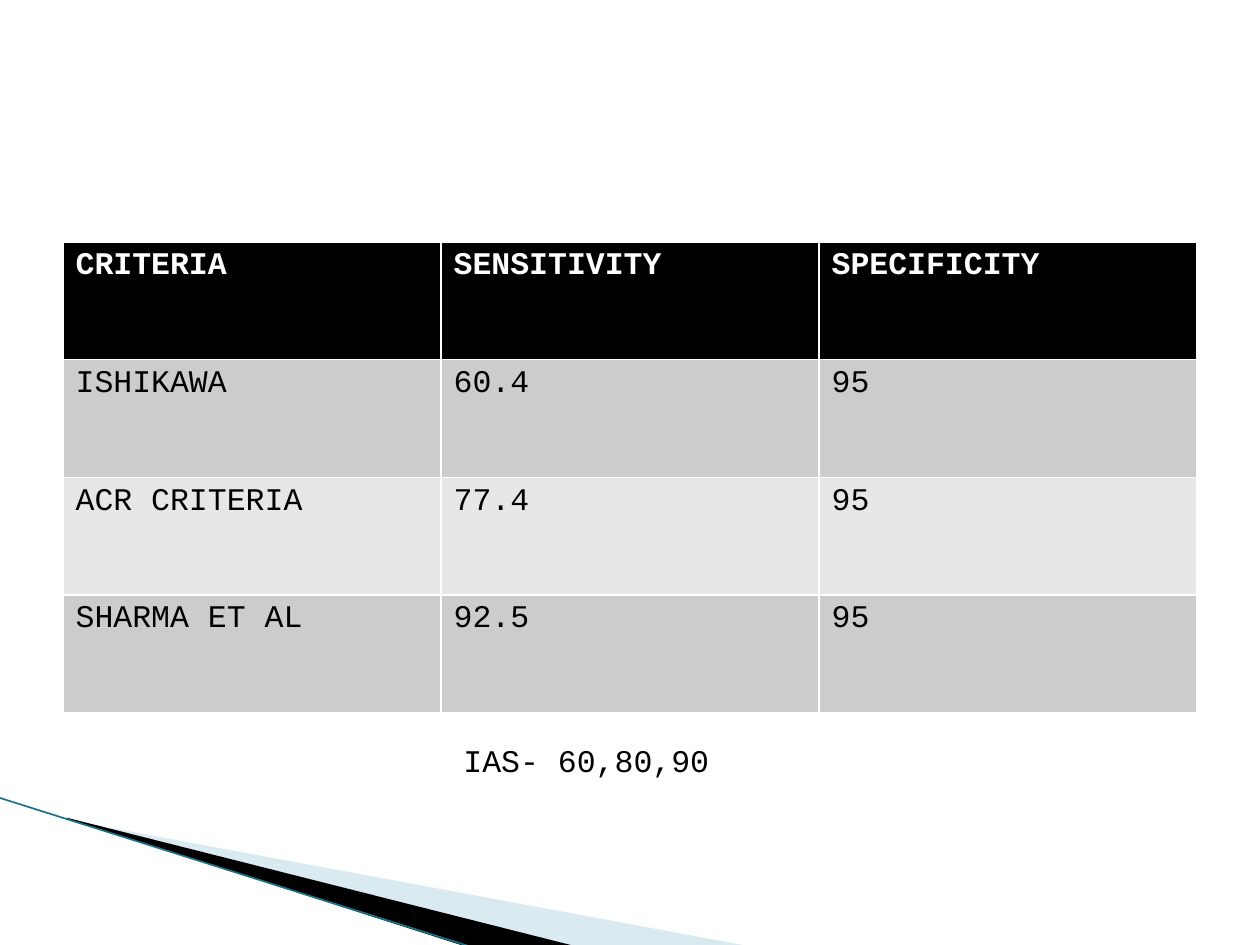
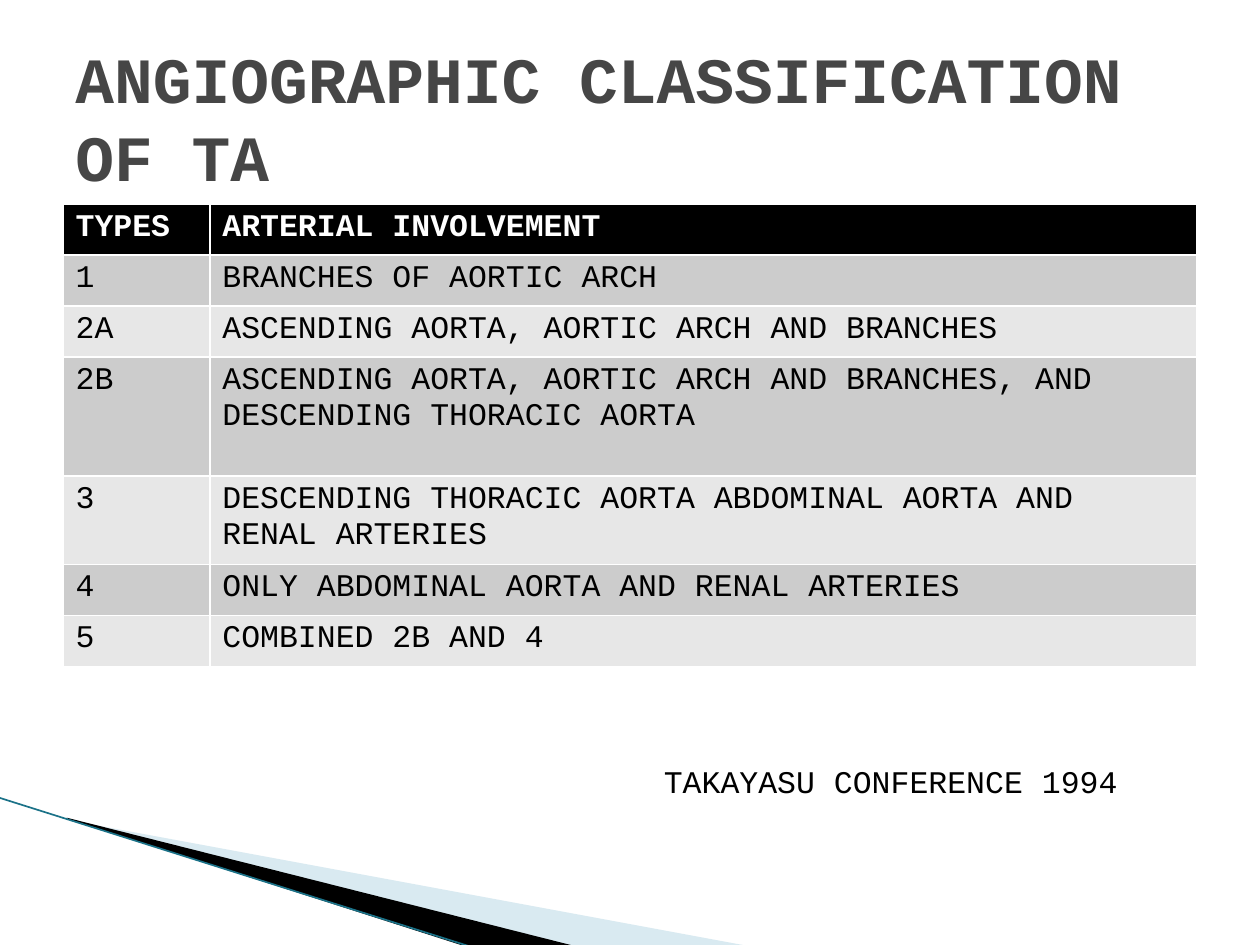
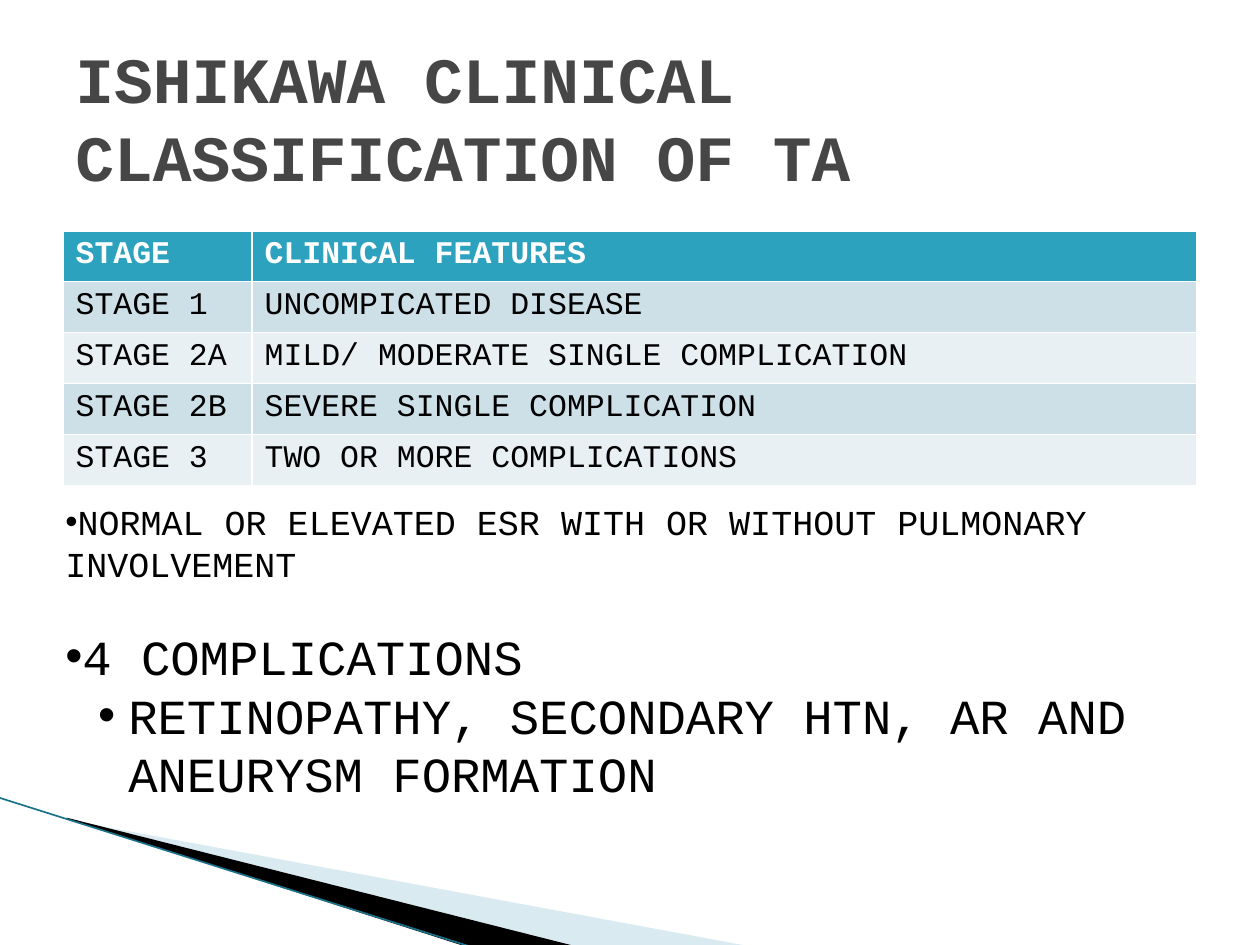
"""Build three slides on the criteria and classification of TA."""
from dataclasses import dataclass

import lxml.etree
import pptx
import pptx.dml.color
import pptx.enum.shapes
import pptx.enum.text
import pptx.oxml.ns
import pptx.util


@dataclass(frozen=True)
class Theme:
    """Colours and type sizes shared by the slides."""
    font: str = "Courier New"
    title: str = "464646"
    text: str = "000000"
    white: str = "FFFFFF"
    wedge: str = "A0CBDC"
    edge: str = "1B7288"
    title_size: float = 36.9
    large: int = 28
    medium: int = 20
    normal: int = 18
    grey_rows: tuple = ("000000", "CCCCCC", "E7E7E7")
    blue_rows: tuple = ("2DA2BF", "CDE0E8", "E8F0F4")


THEME = Theme()
WIDTH = pptx.util.Inches(10)
HEIGHT = pptx.util.Inches(7.5)
COLUMNS = 20
qn = pptx.oxml.ns.qn


def grid(*cells):
    """Turn counts of square grid cells into slide lengths."""
    return [round(n * WIDTH / COLUMNS) for n in cells]


def rgb(value):
    """Turn a hex string into a colour."""
    return pptx.dml.color.RGBColor.from_string(value)


def add_run(p, text, size, color, bold=False):
    """Add one formatted run to a paragraph."""
    r = p.add_run()
    r.text = text
    r.font.name = THEME.font
    r.font.size = pptx.util.Pt(size)
    r.font.bold = bold
    r.font.color.rgb = rgb(color)


def add_box(slide, *place):
    """Add a wrapping text box and return its frame."""
    tf = slide.shapes.add_textbox(*grid(*place)).text_frame
    tf.word_wrap = True
    return tf


def add_caption(slide, text, *place):
    """Add a single line of normal text."""
    tf = add_box(slide, *place)
    add_run(tf.paragraphs[0], text, THEME.normal, THEME.text)


def add_title(slide, text):
    """Add the slide title."""
    tf = add_box(slide, 1, 0.6, 18, 2.5)
    tf.vertical_anchor = pptx.enum.text.MSO_ANCHOR.MIDDLE
    add_run(tf.paragraphs[0], text, THEME.title_size, THEME.title, bold=True)


def set_bullet(p, margin, indent):
    """Give a paragraph a round bullet and a hanging indent."""
    ppr = p._p.get_or_add_pPr()
    left, first = grid(margin, indent)
    ppr.set("marL", str(left))
    ppr.set("indent", str(first))
    lxml.etree.SubElement(ppr, qn("a:buFont"), typeface="Arial")
    lxml.etree.SubElement(ppr, qn("a:buChar"), char="•")


def add_bullets(slide, items, *place):
    """Add bullets given as text, size, level and space before."""
    tf = add_box(slide, *place)
    for i, (text, size, level, before) in enumerate(items):
        p = tf.add_paragraph() if i else tf.paragraphs[0]
        p.level = level
        if before:
            p.space_before = pptx.util.Pt(before)
        set_bullet(p, level, -0.48 * level)
        add_run(p, text, size, THEME.text)


def add_table(slide, rows, left, top, widths, heights, fills):
    """Add a table with a header row and alternating row fills."""
    table = slide.shapes.add_table(
        len(rows), len(widths), *grid(left, top, sum(widths), sum(heights))).table
    for column, width in zip(table.columns, grid(*widths)):
        column.width = width
    for row, height in zip(table.rows, grid(*heights)):
        row.height = height
    for i, values in enumerate(rows):
        header = i == 0
        fill = fills[0] if header else fills[2 - i % 2]
        color = THEME.white if header else THEME.text
        for j, value in enumerate(values):
            cell = table.cell(i, j)
            cell.fill.solid()
            cell.fill.fore_color.rgb = rgb(fill)
            add_run(cell.text_frame.paragraphs[0], value, THEME.normal, color, header)


def set_frame(sp, left, top, width, height):
    """Give an outline a new frame while its points stay in place."""
    dx, dy = sp.left - left, sp.top - top
    for pt in sp._element.iter(qn("a:pt")):
        pt.set("x", str(int(pt.get("x")) + dx))
        pt.set("y", str(int(pt.get("y")) + dy))
    for outline in sp._element.iter(qn("a:path")):
        outline.set("w", str(width))
        outline.set("h", str(height))
    sp.left, sp.top, sp.width, sp.height = left, top, width, height


def add_wedge(slide, points, frame, color, alpha=100):
    """Add a filled outline through grid points."""
    start, *rest = [grid(*point) for point in points]
    builder = slide.shapes.build_freeform(*start)
    builder.add_line_segments(rest)
    sp = builder.convert_to_shape()
    set_frame(sp, *grid(*frame))
    sp.shadow.inherit = False
    sp.line.fill.background()
    sp.fill.solid()
    sp.fill.fore_color.rgb = rgb(color)
    if alpha < 100:
        clr = sp._element.spPr.find(qn("a:solidFill"))[0]
        lxml.etree.SubElement(clr, qn("a:alpha"), val=str(alpha * 1000))


def add_corner(slide):
    """Add the wedges and edge line at the lower left."""
    add_wedge(slide, [(1.1, 13.02), (11.9, 15.02), (9.12, 15.02), (1.1, 13)],
              (1.56, 10.94, 8.32, 3.16), THEME.wedge, alpha=40)
    add_wedge(slide, [(1.06, 12.98), (9.14, 15.02), (7.44, 15.04), (1.08, 13)],
              (-0.12, 12.66, 8.32, 1.84), THEME.text)
    line = slide.shapes.add_connector(
        pptx.enum.shapes.MSO_CONNECTOR.STRAIGHT, *grid(-0.02, 12.66, 7.45, 15.02))
    line.line.color.rgb = rgb(THEME.edge)
    line.line.width = pptx.util.Pt(0.95)
    lxml.etree.SubElement(line._element.spPr, qn("a:effectLst"))


def add_slide(prs, title=None):
    """Add a blank slide with the corner and an optional title."""
    slide = prs.slides.add_slide(prs.slide_layouts[6])
    add_corner(slide)
    if title:
        add_title(slide, title)
    return slide


def criteria_slide(prs):
    """Compare the sensitivity and specificity of the criteria."""
    slide = add_slide(prs)
    rows = [
        ("CRITERIA", "SENSITIVITY", "SPECIFICITY"),
        ("ISHIKAWA", "60.4", "95"),
        ("ACR CRITERIA", "77.4", "95"),
        ("SHARMA ET AL", "92.5", "95"),
    ]
    add_table(slide, rows, 1, 3.84, [6] * 3, [1.87] * 4, THEME.grey_rows)
    add_caption(slide, "IAS- 60,80,90", 7.16, 11.66, 4.34, 0.8)


def angiographic_slide(prs):
    """List the angiographic types."""
    slide = add_slide(prs, "ANGIOGRAPHIC CLASSIFICATION OF TA")
    rows = [
        ("TYPES", "ARTERIAL INVOLVEMENT"),
        ("1", "BRANCHES OF AORTIC ARCH"),
        ("2A", "ASCENDING AORTA, AORTIC ARCH AND BRANCHES"),
        ("2B", "ASCENDING AORTA, AORTIC ARCH AND BRANCHES, AND "
               "DESCENDING THORACIC AORTA"),
        ("3", "DESCENDING THORACIC AORTA ABDOMINAL AORTA AND RENAL ARTERIES"),
        ("4", "ONLY ABDOMINAL AORTA AND RENAL ARTERIES"),
        ("5", "COMBINED 2B AND 4"),
    ]
    heights = [0.81] * 3 + [1.89, 1.35] + [0.81] * 2
    add_table(slide, rows, 1, 3.24, [2.33, 15.67], heights, THEME.grey_rows)
    add_caption(slide, "TAKAYASU CONFERENCE 1994", 10.34, 12, 8.5, 0.8)


def clinical_slide(prs):
    """List the clinical stages and the complications."""
    slide = add_slide(prs, "ISHIKAWA CLINICAL CLASSIFICATION OF TA")
    rows = [
        ("STAGE", "CLINICAL FEATURES"),
        ("STAGE 1", "UNCOMPICATED DISEASE"),
        ("STAGE 2A", "MILD/ MODERATE SINGLE COMPLICATION"),
        ("STAGE 2B", "SEVERE SINGLE COMPLICATION"),
        ("STAGE 3", "TWO OR MORE COMPLICATIONS"),
    ]
    add_table(slide, rows, 1, 3.67, [3, 15], [0.74] + [0.81] * 4, THEME.blue_rows)
    bullets = [
        ("NORMAL OR ELEVATED ESR WITH OR WITHOUT PULMONARY INVOLVEMENT",
         THEME.medium, 0, 0),
        ("4 COMPLICATIONS", THEME.large, 0, 24),
        ("RETINOPATHY, SECONDARY HTN, AR AND ANEURYSM FORMATION",
         THEME.large, 1, 0),
    ]
    add_bullets(slide, bullets, 0.84, 7.84, 18, 5.04)


def main():
    """Build and save the presentation."""
    prs = pptx.Presentation()
    prs.slide_width, prs.slide_height = WIDTH, HEIGHT
    criteria_slide(prs)
    angiographic_slide(prs)
    clinical_slide(prs)
    prs.save("out.pptx")


if __name__ == "__main__":
    main()
